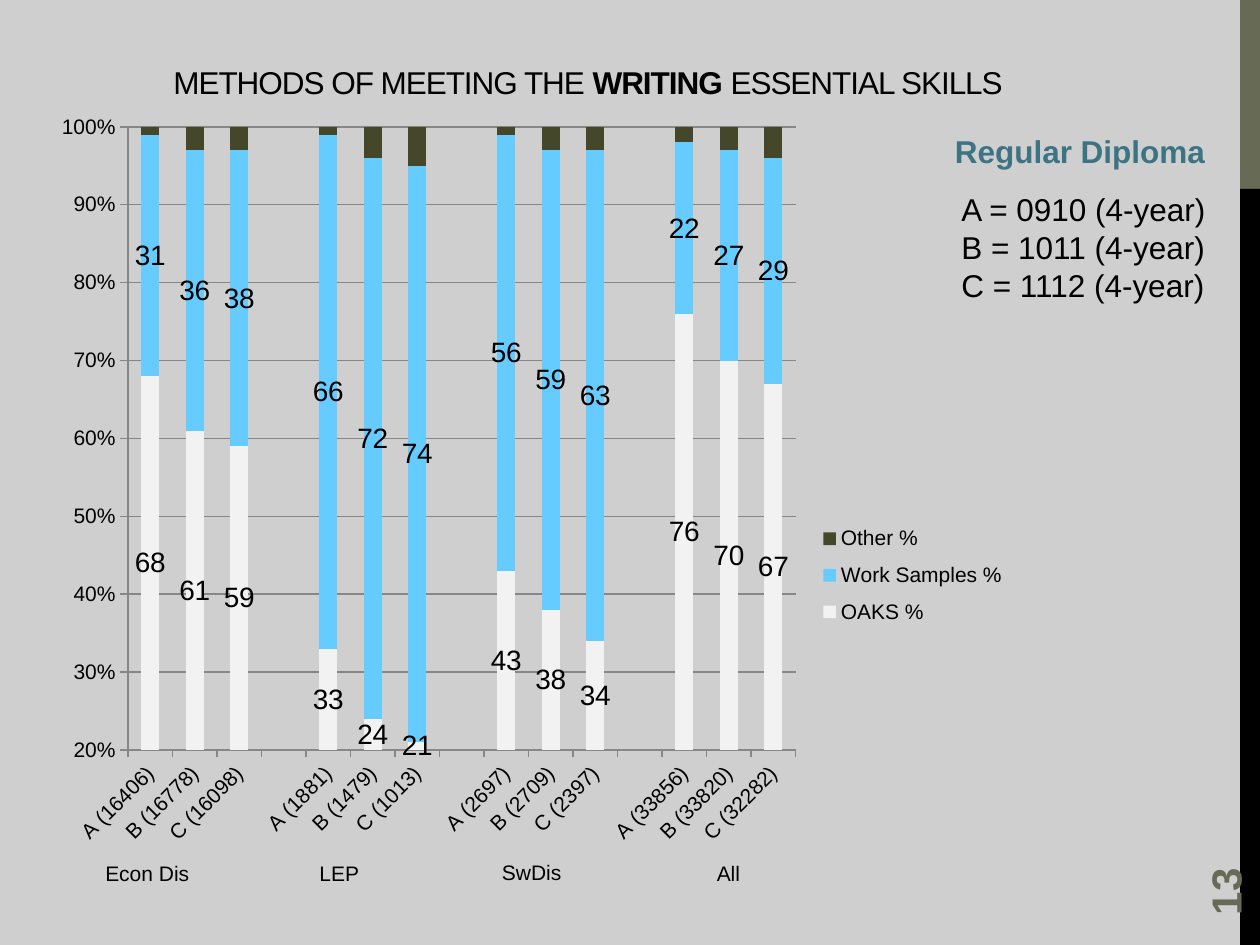
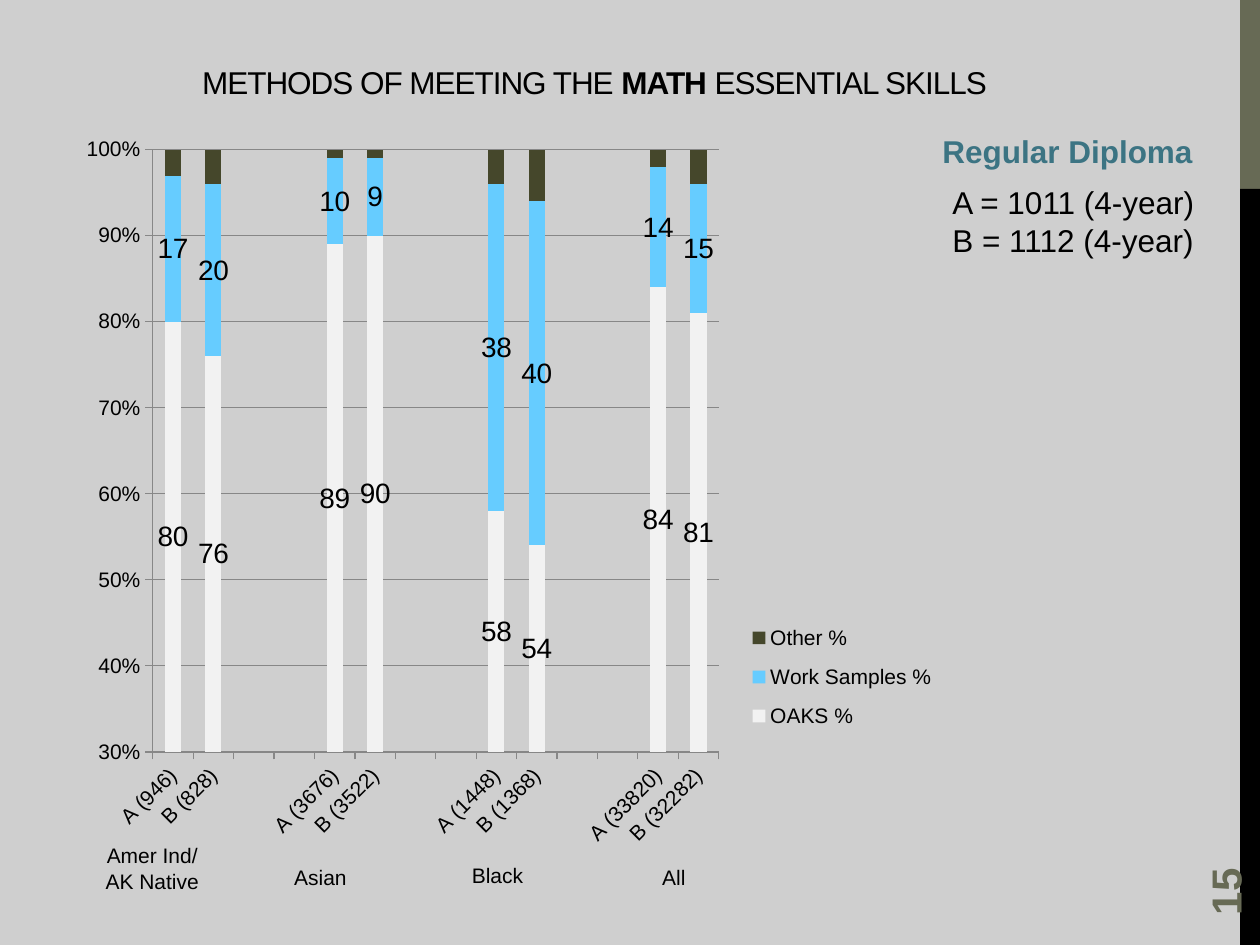
"""Builds two slides on how students met the essential skills for a diploma."""
from dataclasses import dataclass

from lxml.etree import SubElement
from pptx import Presentation
from pptx.chart.data import CategoryChartData
from pptx.dml.color import RGBColor
from pptx.enum.chart import XL_CHART_TYPE, XL_LEGEND_POSITION, XL_TICK_MARK
from pptx.enum.shapes import MSO_SHAPE
from pptx.enum.text import MSO_ANCHOR, PP_ALIGN
from pptx.oxml import parse_xml
from pptx.oxml.ns import nsdecls, qn
from pptx.util import Cm, Pt


@dataclass(frozen=True)
class Theme:
    font: str = "Arial"
    backdrop: str = "CFCFCF"
    ink: str = "000000"
    olive: str = "676A55"
    teal: str = "3C7483"
    grid: str = "878787"
    series: tuple = ("F2F2F2", "66CCFF", "45472B")
    base_size: int = 10
    small: int = 12
    label: int = 16
    body: int = 18
    number: int = 24
    title_spacing: int = -60


SERIES_NAMES = ("OAKS %", "Work Samples %", "Other %")

SLIDES = [
    dict(
        number="13", subject="WRITING", title_left=2.18,
        chart=(0.84, 2.03, 19.69, 15.29), plot=(2.58, 2.56, 13.46, 12.56),
        legend=(16.4, 10.35, 4, 2.5), minimum=0.2, gap=1,
        groups=[
            ("Econ Dis", (1.7, 17.22, 2.54, 0.77),
             [("A (16406)", 68, 31, 1), ("B (16778)", 61, 36, 3), ("C (16098)", 59, 38, 3)]),
            ("LEP", (5.99, 17.22, 1.7, 0.77),
             [("A (1881)", 33, 66, 1), ("B (1479)", 24, 72, 4), ("C (1013)", 21, 74, 5)]),
            ("SwDis", (9.68, 17.2, 2.08, 0.77),
             [("A (2697)", 43, 56, 1), ("B (2709)", 38, 59, 3), ("C (2397)", 34, 63, 3)]),
            ("All", (13.77, 17.22, 1.83, 0.77),
             [("A (33856)", 76, 22, 2), ("B (33820)", 70, 27, 3), ("C (32282)", 67, 29, 4)]),
        ],
        heading=(19, 2.54, 5.61, 1.02), key=(19.13, 3.71, 5.49, 2.57),
        years="A = 0910 (4-year)\nB = 1011 (4-year)\nC = 1112 (4-year)",
    ),
    dict(
        number="15", subject="MATH", title_left=2.31,
        chart=(1.4, 2.51, 17.55, 14.83), plot=(3.08, 3.02, 11.41, 12.14),
        legend=(15, 12.3, 4, 2.7), minimum=0.3, gap=2,
        groups=[
            ("Amer Ind/\nAK Native", (1.7, 16.87, 2.74, 1.27),
             [("A (946)", 80, 17, 3), ("B (828)", 76, 20, 4)]),
            ("Asian", (5.51, 17.3, 1.9, 0.77),
             [("A (3676)", 89, 10, 1), ("B (3522)", 90, 9, 1)]),
            ("Black", (9.09, 17.27, 1.88, 0.77),
             [("A (1448)", 58, 38, 4), ("B (1368)", 54, 40, 6)]),
            ("All", (12.9, 17.3, 1.37, 0.77),
             [("A (33820)", 84, 14, 2), ("B (32282)", 81, 15, 4)]),
        ],
        heading=(18.75, 2.54, 5.61, 1.02), key=(18.95, 3.56, 5.46, 1.8),
        years="A = 1011 (4-year)\nB = 1112 (4-year)",
    ),
]


class SlideBuilder:
    def __init__(self, theme):
        self.theme = theme
        self.deck = Presentation()
        self.deck.slide_width, self.deck.slide_height = Cm(25.4), Cm(19.05)
        self.fill(self.deck.slide_master.background, theme.backdrop)
        self.page = None

    def fill(self, item, colour):
        item.fill.solid()
        item.fill.fore_color.rgb = RGBColor.from_string(colour)

    def style(self, font, size, colour=None, bold=False):
        font.name, font.size, font.bold = self.theme.font, Pt(size), bold
        font.color.rgb = RGBColor.from_string(colour or self.theme.ink)

    def new_page(self, number):
        self.page = self.deck.slides.add_slide(self.deck.slide_layouts[6])
        self.band(0, 3.81, self.theme.olive)
        self.band(3.81, 15.24, self.theme.ink)
        box = self.text(number, (22.86, 16.36, 3.66, 1.02), self.theme.number,
                        self.theme.olive, bold=True, anchor=MSO_ANCHOR.MIDDLE)
        box.rotation = 270

    def band(self, top, height, colour):
        band = self.page.shapes.add_shape(
            MSO_SHAPE.RECTANGLE, Cm(25), Cm(top), Cm(0.4), Cm(height))
        band.shadow.inherit = False
        band.line.fill.background()
        self.fill(band, colour)

    def box(self, frame, anchor=MSO_ANCHOR.TOP, wrap=True):
        box = self.page.shapes.add_textbox(*map(Cm, frame))
        box.text_frame.word_wrap = wrap
        box.text_frame.vertical_anchor = anchor
        return box

    def text(self, text, frame, size, colour=None, bold=False,
             align=PP_ALIGN.LEFT, anchor=MSO_ANCHOR.TOP, wrap=True):
        box = self.box(frame, anchor, wrap)
        box.text_frame.text = text
        for para in box.text_frame.paragraphs:
            para.alignment = align
            self.style(para.font, size, colour, bold)
        return box

    def title(self, subject, left):
        box = self.box((left, 0.86, 19.35, 1.3), MSO_ANCHOR.BOTTOM)
        para = box.text_frame.paragraphs[0]
        para.alignment = PP_ALIGN.CENTER
        for words in ("METHODS OF MEETING THE ", f"{subject} ", "ESSENTIAL SKILLS"):
            span = para.add_run()
            span.text = words
            self.style(span.font, self.theme.body, bold=words.strip() == subject)
            span._r.get_or_add_rPr().set("spc", str(self.theme.title_spacing))

    def place(self, parent, index, frame, chart_frame, inner=False):
        for old in parent.findall(qn("c:layout")):
            parent.remove(old)
        layout = parse_xml(f"<c:layout {nsdecls('c')}><c:manualLayout/></c:layout>")
        left, top, width, height = chart_frame
        settings = [("layoutTarget", "inner")] if inner else []
        settings += [("xMode", "edge"), ("yMode", "edge"),
                     ("x", (frame[0] - left) / width), ("y", (frame[1] - top) / height),
                     ("w", frame[2] / width), ("h", frame[3] / height)]
        for tag, value in settings:
            SubElement(layout[0], qn(f"c:{tag}")).set("val", str(value))
        parent.insert(index, layout)

    def axis(self, axis):
        axis.major_tick_mark = XL_TICK_MARK.OUTSIDE
        axis.format.line.color.rgb = RGBColor.from_string(self.theme.grid)
        self.style(axis.tick_labels.font, self.theme.small)

    def chart(self, rows, frame, plot_frame, legend_frame, minimum):
        categories, *columns = zip(*rows)
        data = CategoryChartData()
        data.categories = categories
        for name, values in zip(SERIES_NAMES, columns):
            data.add_series(name, values)
        chart = self.page.shapes.add_chart(
            XL_CHART_TYPE.COLUMN_STACKED_100, *map(Cm, frame), data).chart
        self.style(chart.font, self.theme.base_size)
        chart.has_title = False

        plot = chart.plots[0]
        plot.gap_width, plot.overlap, plot.vary_by_categories = 150, 100, False
        for series, colour in zip(plot.series, self.theme.series):
            self.fill(series.format, colour)
        for series in list(plot.series)[:2]:
            series.data_labels.show_value = True
            self.style(series.data_labels.font, self.theme.label)

        self.axis(chart.category_axis)
        text_body = chart.category_axis._element.find(qn("c:txPr"))
        text_body.find(qn("a:bodyPr")).set("rot", "-2700000")
        values = chart.value_axis
        self.axis(values)
        values.minimum_scale, values.maximum_scale, values.major_unit = minimum, 1, 0.1
        values.tick_labels.number_format = "0%"
        values.tick_labels.number_format_is_linked = False
        values.has_major_gridlines = True
        values.major_gridlines.format.line.color.rgb = RGBColor.from_string(self.theme.grid)

        chart.has_legend = True
        chart.legend.position = XL_LEGEND_POSITION.RIGHT
        chart.legend.include_in_layout = False
        self.style(chart.legend.font, self.theme.small)
        self.place(chart.legend._element, 1, legend_frame, frame)
        self.place(chart._chartSpace.chart.plotArea, 0, plot_frame, frame, inner=True)


def chart_rows(groups, gap):
    rows = []
    for _, _, bars in groups:
        if rows:
            rows += [("", None, None, None)] * gap
        rows += bars
    return rows


def main():
    theme = Theme()
    builder = SlideBuilder(theme)
    for slide in SLIDES:
        builder.new_page(slide["number"])
        builder.chart(chart_rows(slide["groups"], slide["gap"]), slide["chart"],
                      slide["plot"], slide["legend"], slide["minimum"])
        for name, frame, _ in slide["groups"]:
            builder.text(name, frame, theme.small, align=PP_ALIGN.CENTER)
        builder.text("Regular Diploma", slide["heading"], theme.body, theme.teal,
                     bold=True, wrap=False)
        builder.text(slide["years"], slide["key"], theme.body, wrap=False)
        builder.title(slide["subject"], slide["title_left"])
    builder.deck.save("out.pptx")


if __name__ == "__main__":
    main()
